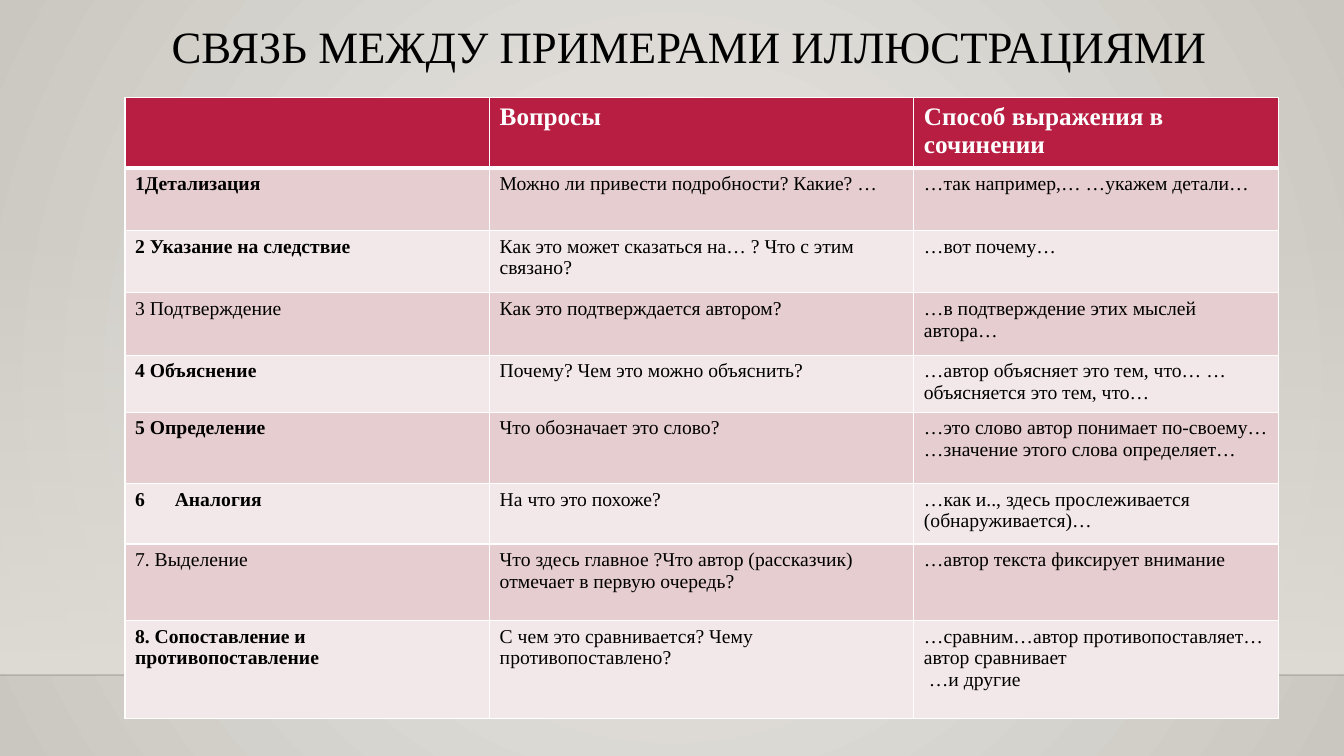
import pptx
import pptx.dml.color
import pptx.enum.shapes
import pptx.enum.text
import pptx.oxml
import pptx.oxml.ns
import pptx.util

Cm = pptx.util.Cm
Pt = pptx.util.Pt
qn = pptx.oxml.ns.qn
NS = pptx.oxml.ns.nsdecls("a")

COLORS = {
    "center": "ECEAE7", "edge": "CAC7C1", "wall": "DFDBD5", "floor": "000001",
    "header": "B71E42", "odd": "E6CDCF", "even": "F3E8E9",
    "white": "FFFFFF", "black": "000000",
}
TITLE = "СВЯЗЬ МЕЖДУ ПРИМЕРАМИ ИЛЛЮСТРАЦИЯМИ"
COLUMN_WIDTHS = [9.19, 10.69, 9.19]
ROW_HEIGHTS = [1.65, 1.57, 1.57, 1.57, 1.42, 1.8, 1.52, 1.93, 2.46]
PLAIN_LABELS = {"3 Подтверждение", "7. Выделение"}
ROWS = [
    ("", "Вопросы", "Способ выражения в сочинении"),
    ("1Детализация", "Можно ли привести подробности? Какие? …",
     "…так например,… …укажем детали…"),
    ("2 Указание на следствие",
     "Как это может сказаться на… ? Что с этим связано?", "…вот почему…"),
    ("3 Подтверждение", "Как это подтверждается автором?",
     "…в подтверждение этих мыслей автора…"),
    ("4 Объяснение", "Почему? Чем это можно объяснить?",
     "…автор объясняет это тем, что… …объясняется это тем, что…"),
    ("5 Определение", "Что обозначает это слово?",
     "…это слово автор понимает по-своему… …значение этого слова определяет…"),
    ("6\tАналогия", "На что это похоже?",
     "…как и.., здесь прослеживается (обнаруживается)…"),
    ("7. Выделение",
     "Что здесь главное ?Что автор (рассказчик) отмечает в первую очередь?",
     "…автор текста фиксирует внимание"),
    ("8. Сопоставление и противопоставление",
     "С чем это сравнивается? Чему противопоставлено?",
     "…сравним…автор противопоставляет…\nавтор сравнивает\n …и другие"),
]


class SlideBuilder:
    font_name = "Times New Roman"

    def __init__(self, slide):
        self.slide = slide

    def color(self, name):
        return pptx.dml.color.RGBColor.from_string(COLORS[name])

    def apply(self, target, values):
        for name, value in values.items():
            setattr(target, name, value)

    def gradient(self, owner, fill, stops, direction):
        fill.gradient()
        stop_xml = "".join(
            f'<a:gs pos="{pos}"><a:srgbClr val="{COLORS[name]}">'
            f'<a:alpha val="{alpha}"/></a:srgbClr></a:gs>'
            for pos, name, alpha in stops)
        old = owner.find(".//" + qn("a:gradFill"))
        old.getparent().replace(old, pptx.oxml.parse_xml(
            f'<a:gradFill {NS} rotWithShape="1"><a:gsLst>{stop_xml}</a:gsLst>'
            f'{direction}</a:gradFill>'))

    def background(self):
        self.gradient(
            self.slide.element, self.slide.background.fill,
            [(0, "center", 100000), (100000, "edge", 100000)],
            '<a:path path="circle"><a:fillToRect l="50000" t="50000" '
            'r="50000" b="50000"/></a:path>')

    def wall(self, left, top, width, height):
        wall = self.slide.shapes.add_shape(
            pptx.enum.shapes.MSO_SHAPE.RECTANGLE,
            Cm(left), Cm(top), Cm(width), Cm(height))
        wall.shadow.inherit = False
        wall.line.fill.background()
        self.gradient(wall.element.spPr, wall.fill,
                      [(0, "wall", 0), (100000, "wall", 100000)],
                      '<a:lin ang="5400000" scaled="0"/>')

    def floor_line(self, left, right, y):
        floor = self.slide.shapes.add_connector(
            pptx.enum.shapes.MSO_CONNECTOR.STRAIGHT,
            Cm(left), Cm(y), Cm(right), Cm(y))
        floor.line.width = Pt(1)
        floor.line.color.rgb = self.color("floor")
        properties = floor.element.spPr
        properties.find(".//" + qn("a:srgbClr")).append(
            pptx.oxml.parse_xml(f'<a:alpha {NS} val="20000"/>'))
        properties.append(pptx.oxml.parse_xml(f"<a:effectLst {NS}/>"))

    def fill_text(self, frame, text, size, color, bold=False):
        frame.text = text
        for paragraph in frame.paragraphs:
            if "\t" in text:
                paragraph._p.get_or_add_pPr().append(pptx.oxml.parse_xml(
                    f'<a:tabLst {NS}><a:tab pos="{Cm(1)}" algn="l"/></a:tabLst>'))
            self.apply(paragraph.font, {
                "name": self.font_name, "size": Pt(size), "bold": bold})
            paragraph.font.color.rgb = self.color(color)

    def title(self, text, left, top, width, height):
        frame = self.slide.shapes.add_textbox(
            Cm(left), Cm(top), Cm(width), Cm(height)).text_frame
        self.apply(frame, {
            "word_wrap": True, "margin_left": 0, "margin_right": 0,
            "vertical_anchor": pptx.enum.text.MSO_ANCHOR.MIDDLE})
        self.fill_text(frame, text, 32, "black")
        self.apply(frame.paragraphs[0], {
            "alignment": pptx.enum.text.PP_ALIGN.CENTER, "line_spacing": 0.9})

    def borders(self, cell, widths):
        properties = cell._tc.get_or_add_tcPr()
        for side, width in widths.items():
            properties.append(pptx.oxml.parse_xml(
                f'<a:ln{side} {NS} w="{Pt(width)}"><a:solidFill>'
                f'<a:srgbClr val="{COLORS["white"]}"/></a:solidFill></a:ln{side}>'))

    def table(self, rows, left, top, widths, heights):
        table = self.slide.shapes.add_table(
            len(rows), len(widths), Cm(left), Cm(top),
            Cm(sum(widths)), Cm(sum(heights))).table
        for column, width in zip(table.columns, widths):
            column.width = Cm(width)
        for index, (row, height, texts) in enumerate(zip(table.rows, heights, rows)):
            row.height = Cm(height)
            is_header = index == 0
            fill = "header" if is_header else "odd" if index % 2 else "even"
            for position, (cell, text) in enumerate(zip(row.cells, texts)):
                is_label = position == 0 and text not in PLAIN_LABELS
                self.borders(cell, {"L": 1, "R": 1, "T": 3 if index == 1 else 1,
                                    "B": 3 if is_header else 1})
                cell.fill.solid()
                cell.fill.fore_color.rgb = self.color(fill)
                self.fill_text(cell.text_frame, text, 18 if is_header else 14,
                               "white" if is_header else "black",
                               is_header or is_label)


def main():
    presentation = pptx.Presentation()
    presentation.slide_width = Cm(33.87)
    presentation.slide_height = Cm(19.05)
    builder = SlideBuilder(
        presentation.slides.add_slide(presentation.slide_layouts[6]))
    builder.background()
    builder.wall(0, 5.61, 33.87, 11.4)
    builder.floor_line(0, 33.87, 17.01)
    builder.title(TITLE, 4.04, 0.36, 26.67, 1.73)
    builder.table(ROWS, 3.15, 2.46, COLUMN_WIDTHS, ROW_HEIGHTS)
    presentation.save("out.pptx")


if __name__ == "__main__":
    main()
